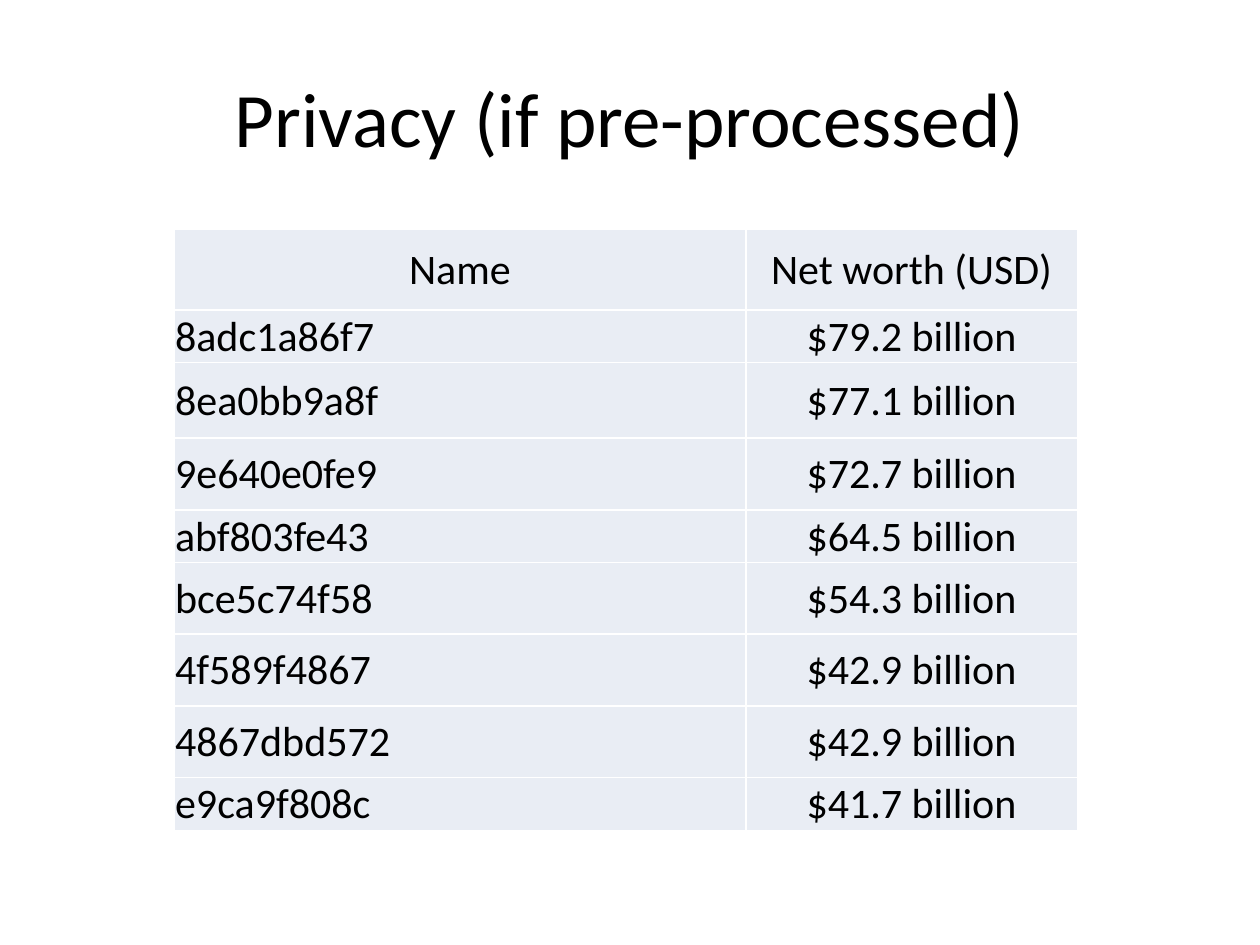
from lxml import etree
from pptx import Presentation
from pptx import util as u
from pptx.dml.color import RGBColor
from pptx.enum import text
from pptx.oxml.ns import qn

TITLE = "Privacy (if pre-processed)"
HEADER = ("Name", "Net worth (USD)")
FORTUNES = [
    ("8adc1a86f7", "$79.2 billion"),
    ("8ea0bb9a8f", "$77.1 billion"),
    ("9e640e0fe9", "$72.7 billion"),
    ("abf803fe43", "$64.5 billion"),
    ("bce5c74f58", "$54.3 billion"),
    ("4f589f4867", "$42.9 billion"),
    ("4867dbd572", "$42.9 billion"),
    ("e9ca9f808c", "$41.7 billion"),
]
COLUMN_WIDTHS = (4.54, 2.63)
ROW_HEIGHTS = (0.64, 0.41, 0.6, 0.57, 0.41, 0.57, 0.57, 0.57, 0.41)
TABLE_LEFT, TABLE_TOP = 1.38, 1.82
FONT, INK, PAPER, CELL_FILL = "Calibri", "000000", "FFFFFF", "E9EDF4"


def color(hex_value):
    return RGBColor.from_string(hex_value)


def write(frame, content, size, centered=True):
    paragraph = frame.paragraphs[0]
    paragraph.alignment = text.PP_ALIGN.CENTER if centered else text.PP_ALIGN.LEFT
    run = paragraph.add_run()
    run.text = content
    run.font.name, run.font.size, run.font.bold = FONT, u.Pt(size), False
    run.font.color.rgb = color(INK)


def style_cell(cell):
    """Set margins, borders and fill; the borders must precede the fill in XML."""
    cell.vertical_anchor = text.MSO_ANCHOR.MIDDLE
    cell.margin_left = cell.margin_right = cell.margin_top = u.Inches(0.01)
    cell.margin_bottom = 0
    properties = cell._tc.get_or_add_tcPr()
    for side in ("lnL", "lnR", "lnT", "lnB"):
        line = etree.SubElement(properties, qn(f"a:{side}"), w=str(u.Pt(1)))
        fill = etree.SubElement(line, qn("a:solidFill"))
        etree.SubElement(fill, qn("a:srgbClr"), val=PAPER)
    cell.fill.solid()
    cell.fill.fore_color.rgb = color(CELL_FILL)


def add_fortune_table(slide):
    rows = [HEADER, *FORTUNES]
    table = slide.shapes.add_table(
        len(rows), len(HEADER), u.Inches(TABLE_LEFT), u.Inches(TABLE_TOP),
        u.Inches(sum(COLUMN_WIDTHS)), u.Inches(sum(ROW_HEIGHTS))).table
    table.horz_banding = False
    for column, width in zip(table.columns, COLUMN_WIDTHS):
        column.width = u.Inches(width)
    for r, (values, height) in enumerate(zip(rows, ROW_HEIGHTS)):
        table.rows[r].height = u.Inches(height)
        for c, value in enumerate(values):
            cell = table.cell(r, c)
            style_cell(cell)
            write(cell.text_frame, value, size=24, centered=r == 0 or c == 1)


def main():
    deck = Presentation()
    deck.slide_width, deck.slide_height = u.Inches(10), u.Inches(7.5)
    slide = deck.slides.add_slide(deck.slide_layouts[5])
    slide.background.fill.solid()
    slide.background.fill.fore_color.rgb = color(PAPER)

    title = slide.shapes.title
    title.left, title.top = u.Inches(0.5), u.Inches(0.3)
    title.width, title.height = u.Inches(9), u.Inches(1.25)
    title.text_frame.vertical_anchor = text.MSO_ANCHOR.MIDDLE
    write(title.text_frame, TITLE, size=44)

    add_fortune_table(slide)
    deck.save("out.pptx")


if __name__ == "__main__":
    main()
